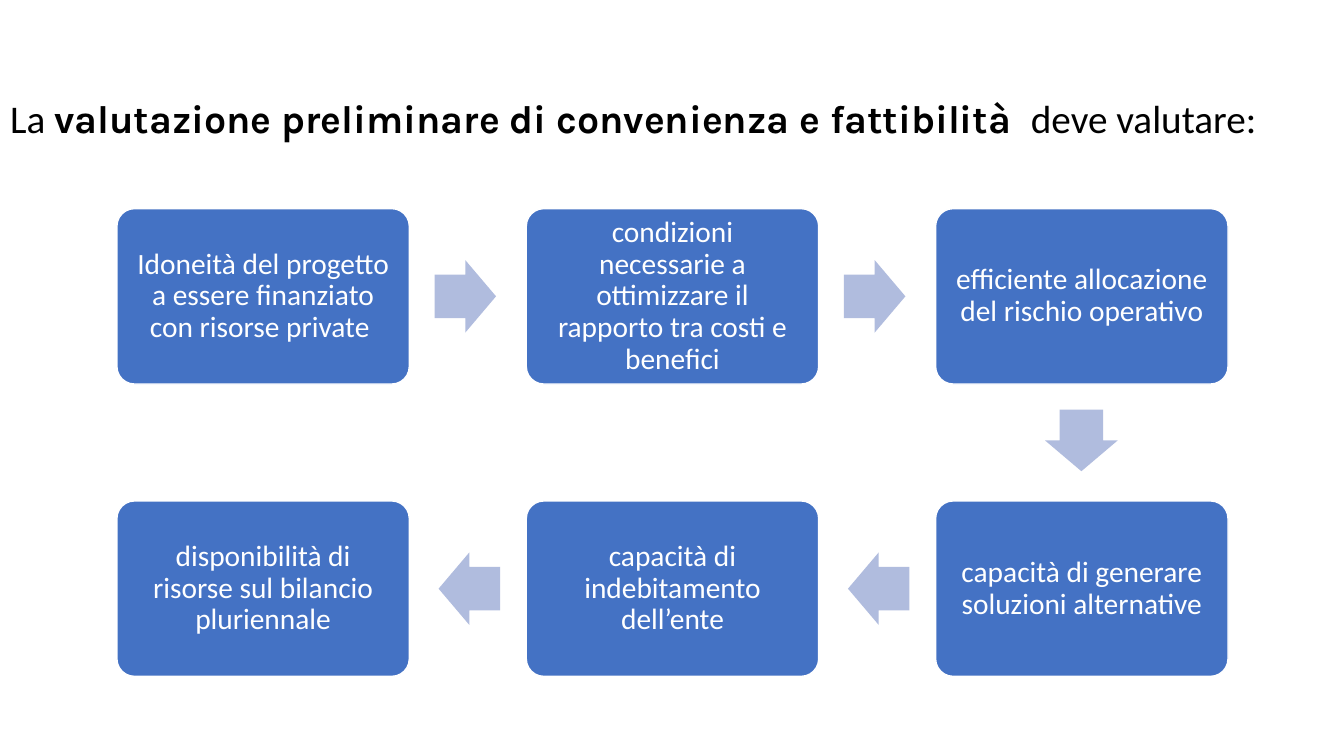
from dataclasses import dataclass
from typing import Optional

from pptx import Presentation
from pptx import util as u
from pptx.dml.color import RGBColor
from pptx.enum import shapes, text

COLORS = {"box": "4472C4", "arrow": "B0BCDE", "light": "FFFFFF", "heading": "000000"}
GRID_LEFT, GRID_TOP = 1.16, 2.07
COLUMN_PITCH, ROW_PITCH = 4.06, 2.9
BOX_WIDTH, BOX_HEIGHT = 2.9, 1.74
ARROW_LENGTH, ARROW_BREADTH = 0.61, 0.72
ARROW_OFFSETS = {0: (3.15, 0.51), 90: (1.14, 1.94), 180: (-0.87, 0.51)}


@dataclass(frozen=True)
class Step:
    wording: str
    column: int
    row: int
    turn: Optional[int] = None


STEPS = [
    Step("Idoneità del progetto a essere finanziato con risorse private ", 0, 0, 0),
    Step("condizioni necessarie a ottimizzare il rapporto tra costi e benefici", 1, 0, 0),
    Step("efficiente allocazione del rischio operativo", 2, 0, 90),
    Step("capacità di generare soluzioni alternative", 2, 1, 180),
    Step("capacità di indebitamento dell’ente", 1, 1, 180),
    Step("disponibilità di risorse sul bilancio pluriennale", 0, 1),
]
HEADING = [
    ("La ", "Calibri", False),
    ("valutazione preliminare di convenienza e fattibilità  ", "Karla", True),
    ("deve valutare:", "Calibri", False),
]


def color(name: str) -> RGBColor:
    return RGBColor.from_string(COLORS[name])


def draw_heading(slide) -> None:
    heading = slide.shapes.title
    heading.left, heading.top = u.Inches(0), u.Inches(0.89)
    heading.width, heading.height = u.Inches(13.33), u.Inches(0.57)
    frame = heading.text_frame
    frame.word_wrap = True
    frame.auto_size = text.MSO_AUTO_SIZE.SHAPE_TO_FIT_TEXT
    frame.vertical_anchor = text.MSO_ANCHOR.TOP
    sentence = frame.paragraphs[0]
    sentence.alignment = text.PP_ALIGN.LEFT
    sentence.line_spacing = 1.0
    sentence.space_before = u.Pt(0)
    sentence.font.size = u.Pt(28)
    sentence.font.color.rgb = color("heading")
    for wording, font_name, bold in HEADING:
        part = sentence.add_run()
        part.text = wording
        part.font.name = font_name
        part.font.size = u.Pt(28)
        part.font.bold = bold
        part.font.color.rgb = color("heading")


def draw_box(slide, step: Step, left: float, top: float) -> None:
    box = slide.shapes.add_shape(
        shapes.MSO_SHAPE.ROUNDED_RECTANGLE,
        u.Inches(left), u.Inches(top), u.Inches(BOX_WIDTH), u.Inches(BOX_HEIGHT),
    )
    box.adjustments[0] = 0.1
    box.shadow.inherit = False
    box.fill.solid()
    box.fill.fore_color.rgb = color("box")
    box.line.color.rgb = color("light")
    box.line.width = u.Pt(1)
    frame = box.text_frame
    frame.word_wrap = True
    frame.vertical_anchor = text.MSO_ANCHOR.MIDDLE
    frame.margin_left = frame.margin_right = u.Inches(0.14)
    frame.margin_top = frame.margin_bottom = u.Inches(0.14)
    requirement = frame.paragraphs[0]
    requirement.text = step.wording
    requirement.alignment = text.PP_ALIGN.CENTER
    requirement.line_spacing = 0.9
    requirement.font.name = "Calibri"
    requirement.font.size = u.Pt(21)
    requirement.font.color.rgb = color("light")


def draw_arrow(slide, turn: int, box_left: float, box_top: float) -> None:
    across, down = ARROW_OFFSETS[turn]
    arrow = slide.shapes.add_shape(
        shapes.MSO_SHAPE.RIGHT_ARROW,
        u.Inches(box_left + across), u.Inches(box_top + down),
        u.Inches(ARROW_LENGTH), u.Inches(ARROW_BREADTH),
    )
    arrow.adjustments[0] = 0.6
    arrow.adjustments[1] = 0.5
    arrow.rotation = turn
    arrow.shadow.inherit = False
    arrow.fill.solid()
    arrow.fill.fore_color.rgb = color("arrow")
    arrow.line.fill.background()


def main() -> None:
    deck = Presentation()
    deck.slide_width, deck.slide_height = u.Inches(13.33), u.Inches(7.5)
    slide = deck.slides.add_slide(deck.slide_layouts[5])
    draw_heading(slide)
    for step in STEPS:
        left = GRID_LEFT + step.column * COLUMN_PITCH
        top = GRID_TOP + step.row * ROW_PITCH
        draw_box(slide, step, left, top)
        if step.turn is not None:
            draw_arrow(slide, step.turn, left, top)
    deck.save("out.pptx")


if __name__ == "__main__":
    main()
